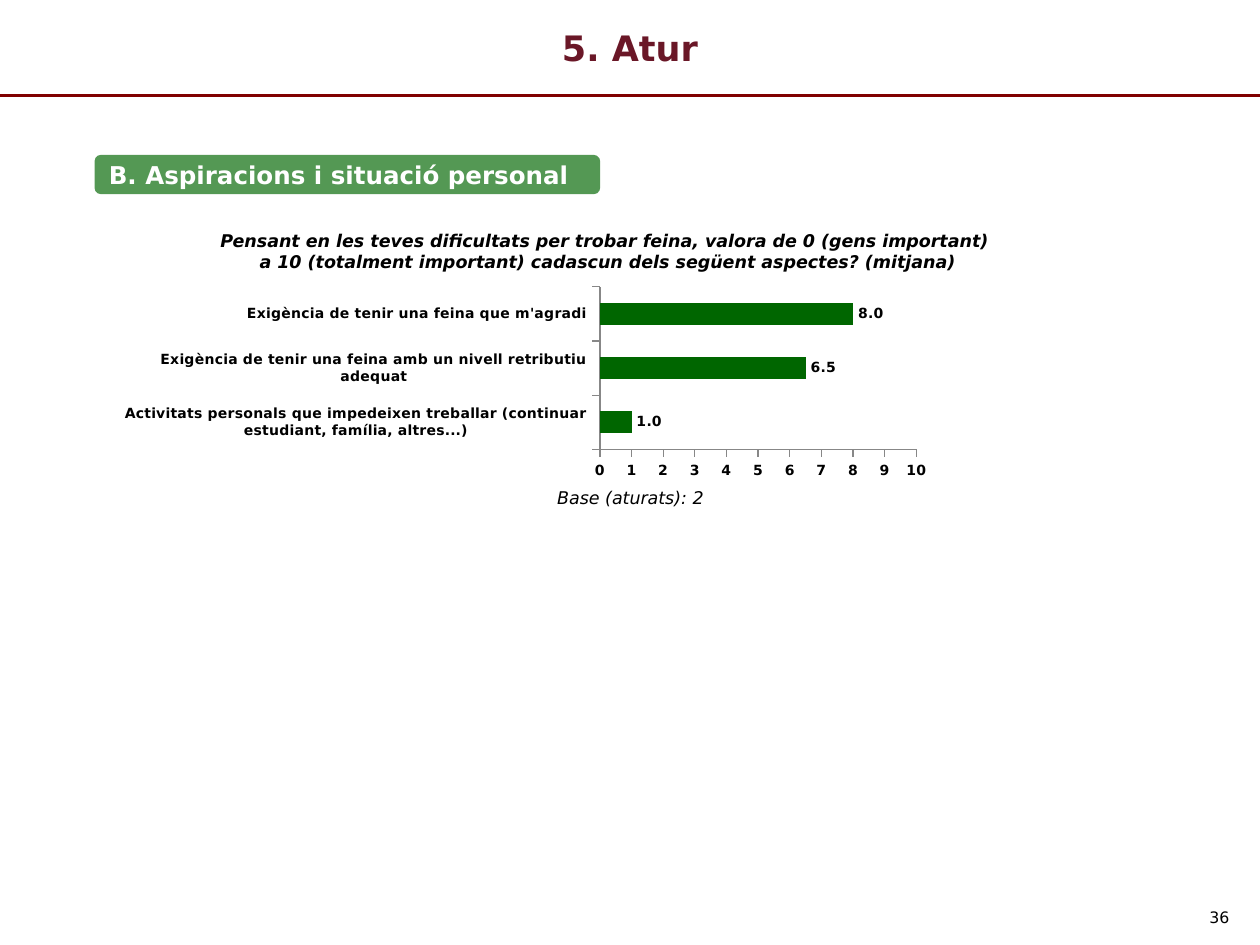
from collections import namedtuple
from dataclasses import dataclass

from lxml import etree
from pptx import Presentation
from pptx.chart.data import CategoryChartData
from pptx.dml.color import RGBColor
from pptx.enum.chart import XL_CHART_TYPE, XL_LABEL_POSITION, XL_TICK_MARK
from pptx.enum.shapes import MSO_CONNECTOR, MSO_SHAPE
from pptx.enum.text import MSO_ANCHOR, PP_ALIGN
from pptx.oxml import parse_xml
from pptx.oxml.ns import nsdecls, qn
from pptx.util import Pt

BAR = XL_CHART_TYPE.BAR_CLUSTERED
OUT_END = XL_LABEL_POSITION.OUTSIDE_END
TICK_OUT = XL_TICK_MARK.OUTSIDE
NO_TICK = XL_TICK_MARK.NONE
STRAIGHT = MSO_CONNECTOR.STRAIGHT
ROUND = MSO_SHAPE.ROUNDED_RECTANGLE
MIDDLE = MSO_ANCHOR.MIDDLE
LEFT, CENTER, RIGHT = PP_ALIGN.LEFT, PP_ALIGN.CENTER, PP_ALIGN.RIGHT

Box = namedtuple("Box", "x y w h")


@dataclass(frozen=True)
class Theme:
    font: str = "DejaVu Sans"
    ink: RGBColor = RGBColor(0, 0, 0)
    white: RGBColor = RGBColor(255, 255, 255)
    wine: RGBColor = RGBColor(0x6A, 0x17, 0x27)
    rule: RGBColor = RGBColor(0x80, 0, 0)
    green: RGBColor = RGBColor(0, 0x66, 0)
    axis: RGBColor = RGBColor(0x87, 0x87, 0x87)
    title: int = 20
    head: int = 14
    body: int = 10
    page: int = 9
    label: int = 8


THEME = Theme()


def place(box):
    return [Pt(v) for v in box]


def style(font, size, color=THEME.ink, bold=False, italic=False):
    font.name, font.size = THEME.font, Pt(size)
    font.bold, font.italic = bold, italic
    font.color.rgb = color


def write(frame, lines, align, size, wrap=True, **look):
    frame.word_wrap = wrap
    frame.vertical_anchor = MIDDLE
    for i, line in enumerate(lines):
        para = frame.paragraphs[0] if i == 0 else frame.add_paragraph()
        para.alignment = align
        run = para.add_run()
        run.text = line
        style(run.font, size, **look)


def add_text(slide, box, lines, align, size, **look):
    shape = slide.shapes.add_textbox(*place(box))
    write(shape.text_frame, lines, align, size, **look)


def add_header(slide, box, text):
    """Title filling the box, with a rule along its lower edge."""
    title = slide.shapes.title
    title.left, title.top, title.width, title.height = place(box)
    write(title.text_frame, [text], CENTER, THEME.title,
          color=THEME.wine, bold=True)
    base = box.y + box.h
    rule = slide.shapes.add_connector(
        STRAIGHT, *place((box.x, base, box.x + box.w, base)))
    rule.line.color.rgb = THEME.rule
    rule.line.width = Pt(1.5)
    etree.SubElement(rule.element.spPr, qn("a:effectLst"))


def add_banner(slide, box, text):
    shape = slide.shapes.add_shape(ROUND, *place(box))
    shape.shadow.inherit = False
    shape.fill.solid()
    shape.fill.fore_color.rgb = THEME.green
    tint = shape.element.spPr.find(".//" + qn("a:srgbClr"))
    etree.SubElement(tint, qn("a:alpha"), val="67000")
    shape.line.fill.background()
    write(shape.text_frame, [text], LEFT, THEME.head,
          color=THEME.white, bold=True)


def set_plot(chart, x, y, w, h):
    """Fix the inner plot area, in fractions of the chart."""
    parts = "".join(f'<c:{k} val="{v}"/>' for k, v in (
        ("layoutTarget", "inner"), ("xMode", "edge"), ("yMode", "edge"),
        ("x", x), ("y", y), ("w", w), ("h", h)))
    area = chart.element.find(".//" + qn("c:plotArea"))
    for old in area.findall(qn("c:layout")):
        area.remove(old)
    area.insert(0, parse_xml(
        f'<c:layout {nsdecls("c")}><c:manualLayout>{parts}'
        '</c:manualLayout></c:layout>'))


def add_bars(slide, box, items):
    data = CategoryChartData(number_format="#,##0.0")
    data.categories = [name for name, _ in items]
    data.add_series("Series 1", [value for _, value in items])
    chart = slide.shapes.add_chart(BAR, *place(box), data).chart
    chart.has_legend = chart.has_title = False
    style(chart.font, THEME.label, bold=True)
    set_plot(chart, 0.59, 0.02, 0.38, 0.81)

    for axis in (chart.category_axis, chart.value_axis):
        axis.has_major_gridlines = False
        axis.major_tick_mark, axis.minor_tick_mark = TICK_OUT, NO_TICK
        axis.format.line.color.rgb = THEME.axis
        axis.format.line.width = Pt(0.75)
        style(axis.tick_labels.font, THEME.label, bold=True)
    scale = chart.value_axis
    scale.minimum_scale, scale.maximum_scale, scale.major_unit = 0, 10, 1
    scale.tick_labels.number_format = "#,##0"
    scale.tick_labels.number_format_is_linked = False

    plot = chart.plots[0]
    plot.gap_width = 150
    plot.vary_by_categories = False
    fill = plot.series[0].format.fill
    fill.solid()
    fill.fore_color.rgb = THEME.green
    plot.has_data_labels = True
    labels = plot.data_labels
    labels.show_value = True
    labels.position = OUT_END
    labels.number_format = "#,##0.0"
    labels.number_format_is_linked = False
    style(labels.font, THEME.label, bold=True)


def main():
    deck = Presentation()
    deck.slide_width, deck.slide_height = Pt(720), Pt(540)
    slide = deck.slides.add_slide(deck.slide_layouts[5])
    add_header(slide, Box(0, 0, 720, 54.5), "5. Atur")
    add_bars(slide, Box(62, 161.5, 476, 115), [
        ("Activitats personals que impedeixen treballar "
         "(continuar estudiant, família, altres...)", 1),
        ("Exigència de tenir una feina amb un nivell retributiu adequat", 6.5),
        ("Exigència de tenir una feina que m'agradi", 8),
    ])
    add_text(slide, Box(244, 274.5, 232.5, 19.5), ["Base (aturats): 2"],
             CENTER, THEME.body, italic=True)
    add_banner(slide, Box(54, 88.5, 289, 22.5),
               "B. Aspiracions i situació personal")
    add_text(slide, Box(118, 127.5, 458, 31.5), [
        "Pensant en les teves dificultats per trobar feina, "
        "valora de 0 (gens important) ",
        "a 10 (totalment important) cadascun dels següent aspectes? (mitjana)",
    ], CENTER, THEME.body, wrap=False, bold=True, italic=True)
    add_text(slide, Box(541.5, 516.5, 168, 15), ["36"], RIGHT, THEME.page)
    deck.save("out.pptx")


if __name__ == "__main__":
    main()
